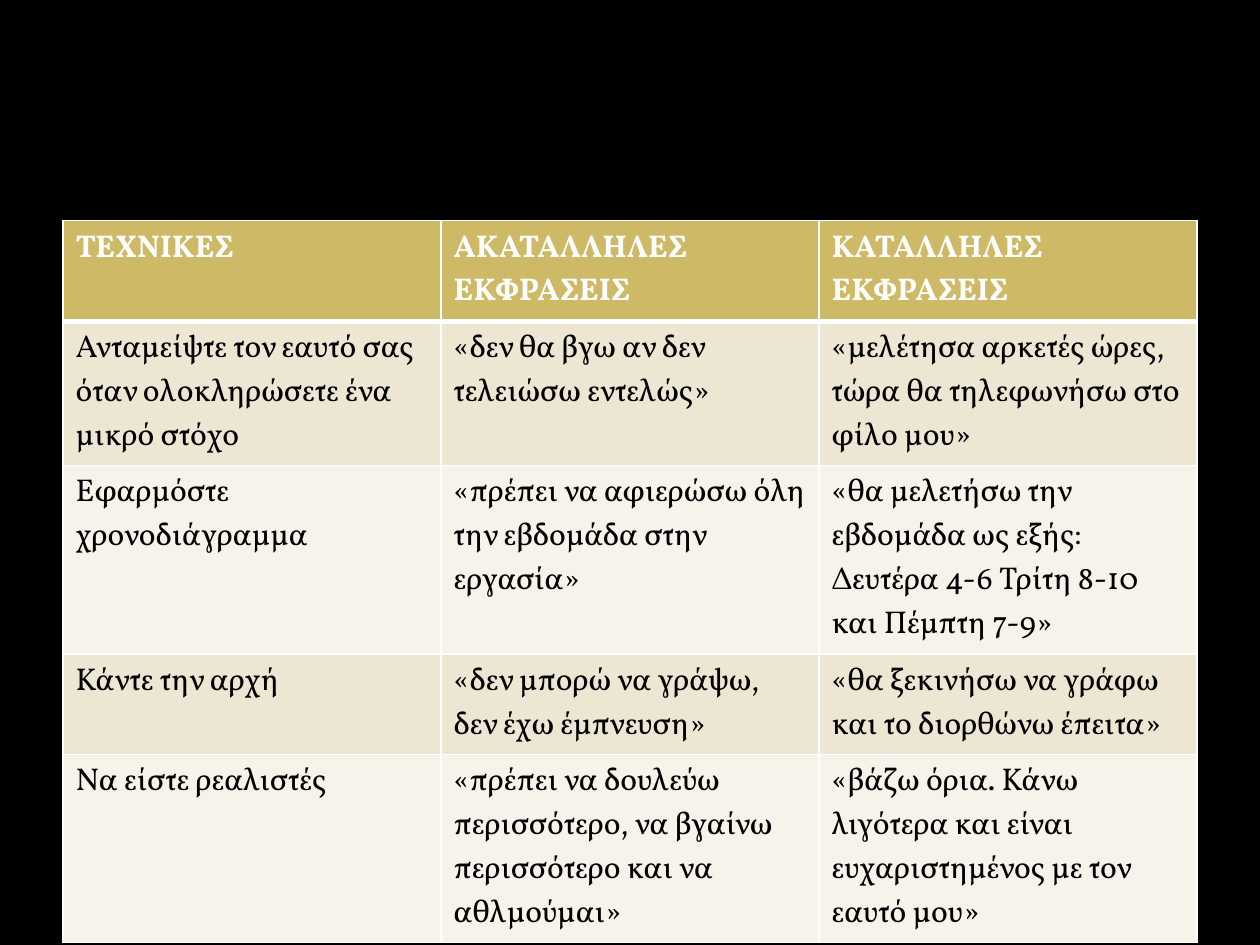
from lxml.etree import SubElement
from pptx import Presentation
from pptx.dml.color import RGBColor
from pptx.oxml.ns import qn
from pptx.util import Cm, Pt

ROWS = [
    ("ΤΕΧΝΙΚΕΣ", "ΑΚΑΤΑΛΛΗΛΕΣ ΕΚΦΡΑΣΕΙΣ", "ΚΑΤΑΛΛΗΛΕΣ ΕΚΦΡΑΣΕΙΣ"),
    ("Ανταμείψτε τον εαυτό σας όταν ολοκληρώσετε ένα μικρό στόχο",
     "«δεν θα βγω αν δεν τελειώσω εντελώς»",
     "«μελέτησα αρκετές ώρες, τώρα θα τηλεφωνήσω στο φίλο μου»"),
    ("Εφαρμόστε χρονοδιάγραμμα",
     "«πρέπει να αφιερώσω όλη την εβδομάδα στην εργασία»",
     "«θα μελετήσω την εβδομάδα ως εξής: Δευτέρα 4-6 Τρίτη 8-10 και Πέμπτη 7-9»"),
    ("Κάντε την αρχή",
     "«δεν μπορώ να γράψω, δεν έχω έμπνευση»",
     "«θα ξεκινήσω να γράφω και το διορθώνω έπειτα»"),
    ("Να είστε ρεαλιστές",
     "«πρέπει να δουλεύω περισσότερο, να βγαίνω περισσότερο και να αθλμούμαι»",
     "«βάζω όρια. Κάνω λιγότερα και είναι ευχαριστημένος με τον εαυτό μου»"),
]
FONT = "Vollkorn"
BLACK, WHITE, GOLD = "000000", "FFFFFF", "CEB966"
BANDS = ("EDE6D3", "F6F3EA")
COL, ROW = Cm(7.62), Cm(1.04)


def paint(fill, color):
    fill.solid()
    fill.fore_color.rgb = RGBColor.from_string(color)


def edge(cell, side, width):
    line = SubElement(cell._tc.get_or_add_tcPr(), qn(f"a:ln{side}"), w=str(Pt(width)))
    solid = SubElement(line, qn("a:solidFill"))
    SubElement(solid, qn("a:srgbClr"), val=WHITE)


def style(cell, text, row):
    head = row == 0
    thick = {0: "B", 1: "T"}.get(row)
    for side in "LRTB":
        edge(cell, side, 3 if side == thick else 1)
    paint(cell.fill, GOLD if head else BANDS[(row - 1) % 2])
    cell.text_frame.text = text
    font = cell.text_frame.paragraphs[0].runs[0].font
    font.name, font.size, font.bold = FONT, Pt(18), head
    paint(font.fill, WHITE if head else BLACK)


def main():
    deck = Presentation()
    deck.slide_width, deck.slide_height = Cm(25.4), Cm(19.05)
    slide = deck.slides.add_slide(deck.slide_layouts[6])
    paint(slide.background.fill, BLACK)
    count, cols = len(ROWS), len(ROWS[0])
    table = slide.shapes.add_table(
        count, cols, Cm(1.27), Cm(4.45), COL * cols, ROW * count).table
    for row, texts in enumerate(ROWS):
        for col, text in enumerate(texts):
            style(table.cell(row, col), text, row)
    deck.save("out.pptx")


if __name__ == "__main__":
    main()
